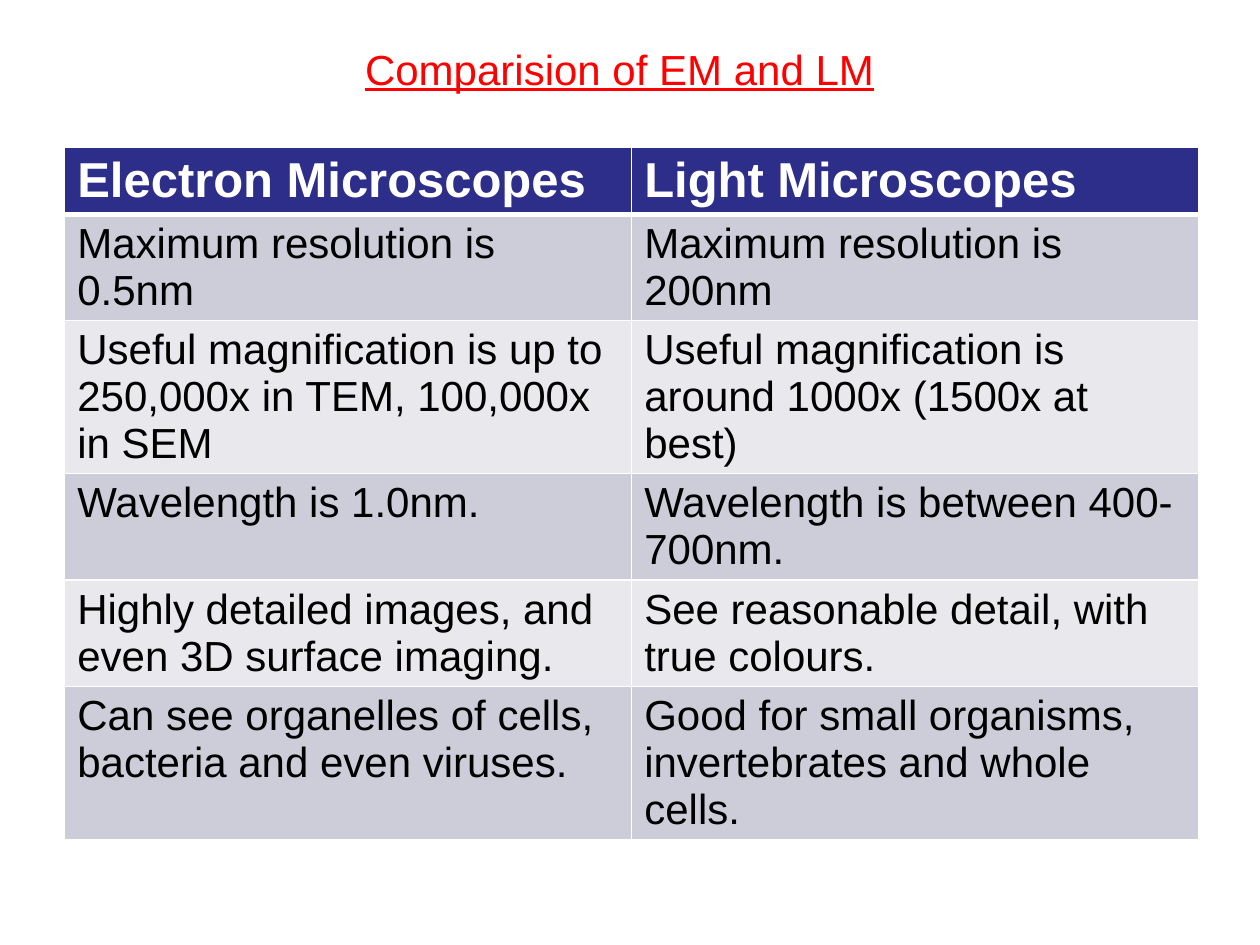
from dataclasses import dataclass

from lxml.etree import SubElement
from pptx import Presentation
from pptx.dml.color import RGBColor
from pptx.enum.text import MSO_ANCHOR, MSO_AUTO_SIZE, PP_ALIGN
from pptx.oxml.ns import qn
from pptx.util import Pt


@dataclass(frozen=True)
class Theme:
    """Colours, font and type sizes of the slide."""
    font: str = "Arial"
    title: str = "FF0000"
    header_fill: str = "2D2D8A"
    header_text: str = "FFFFFF"
    band_fills: tuple = ("CDCDDA", "E8E8ED")
    body_text: str = "000000"
    border: str = "FFFFFF"
    thin_border: int = 1
    header_border: int = 3
    header_size: int = 28
    body_size: int = 24


THEME = Theme()
TITLE = "Comparision of EM and LM"
COMPARISON = [
    ("Electron Microscopes", "Light Microscopes"),
    ("Maximum resolution is 0.5nm", "Maximum resolution is 200nm"),
    ("Useful magnification is up to 250,000x in TEM, 100,000x in SEM",
     "Useful magnification is around 1000x (1500x at best)"),
    ("Wavelength is 1.0nm.", "Wavelength is between 400-700nm."),
    ("Highly detailed images, and even 3D surface imaging.",
     "See reasonable detail, with true colours."),
    ("Can see organelles of cells, bacteria and even viruses.",
     "Good for small organisms, invertebrates and whole cells."),
]
ROW_HEIGHTS = (37, 60, 87, 60, 60, 87)


def format_font(font, size, colour, bold=False):
    """Apply the theme font with the given size, colour and weight."""
    font.name = THEME.font
    font.size = Pt(size)
    font.bold = bold
    font.color.rgb = RGBColor.from_string(colour)


def add_borders(cell, top, bottom):
    """Draw the four cell borders; top and bottom are widths in points."""
    properties = cell._tc.get_or_add_tcPr()
    widths = {"lnL": THEME.thin_border, "lnR": THEME.thin_border,
              "lnT": top, "lnB": bottom}
    for side, width in widths.items():
        line = SubElement(properties, qn(f"a:{side}"), w=str(Pt(width)))
        fill = SubElement(line, qn("a:solidFill"))
        SubElement(fill, qn("a:srgbClr"), val=THEME.border)


def format_cell(cell, text, row_index):
    """Fill one cell as a header or as part of a banded row."""
    is_header = row_index == 0
    add_borders(cell,
                THEME.header_border if row_index == 1 else THEME.thin_border,
                THEME.header_border if is_header else THEME.thin_border)
    fill = THEME.header_fill if is_header else THEME.band_fills[(row_index - 1) % 2]
    cell.fill.solid()
    cell.fill.fore_color.rgb = RGBColor.from_string(fill)
    cell.text = text
    format_font(cell.text_frame.paragraphs[0].font,
                THEME.header_size if is_header else THEME.body_size,
                THEME.header_text if is_header else THEME.body_text,
                is_header)


def place_title(slide, left, top, width, height):
    """Place the underlined title in the given box."""
    title = slide.shapes.title
    title.left, title.top, title.width, title.height = map(Pt, (left, top, width, height))
    frame = title.text_frame
    frame.text = TITLE
    frame.word_wrap = True
    frame.auto_size = MSO_AUTO_SIZE.NONE
    frame.vertical_anchor = MSO_ANCHOR.TOP
    paragraph = frame.paragraphs[0]
    paragraph.alignment = PP_ALIGN.CENTER
    format_font(paragraph.font, THEME.body_size, THEME.title)
    paragraph.font.underline = True


def place_comparison(slide, left, top, width):
    """Place the comparison table with equal columns across the given width."""
    column_count = len(COMPARISON[0])
    table = slide.shapes.add_table(
        len(COMPARISON), column_count,
        Pt(left), Pt(top), Pt(width), Pt(sum(ROW_HEIGHTS))).table
    for column in table.columns:
        column.width = Pt(width / column_count)
    for row_index, (texts, height) in enumerate(zip(COMPARISON, ROW_HEIGHTS)):
        table.rows[row_index].height = Pt(height)
        for column_index, text in enumerate(texts):
            format_cell(table.cell(row_index, column_index), text, row_index)


def main():
    """Build the slide and save it."""
    presentation = Presentation()
    presentation.slide_width, presentation.slide_height = Pt(720), Pt(540)
    slide = presentation.slides.add_slide(presentation.slide_layouts[5])
    place_comparison(slide, 37, 84, 648)
    place_title(slide, 133, 21, 442, 36)
    presentation.save("out.pptx")


if __name__ == "__main__":
    main()
